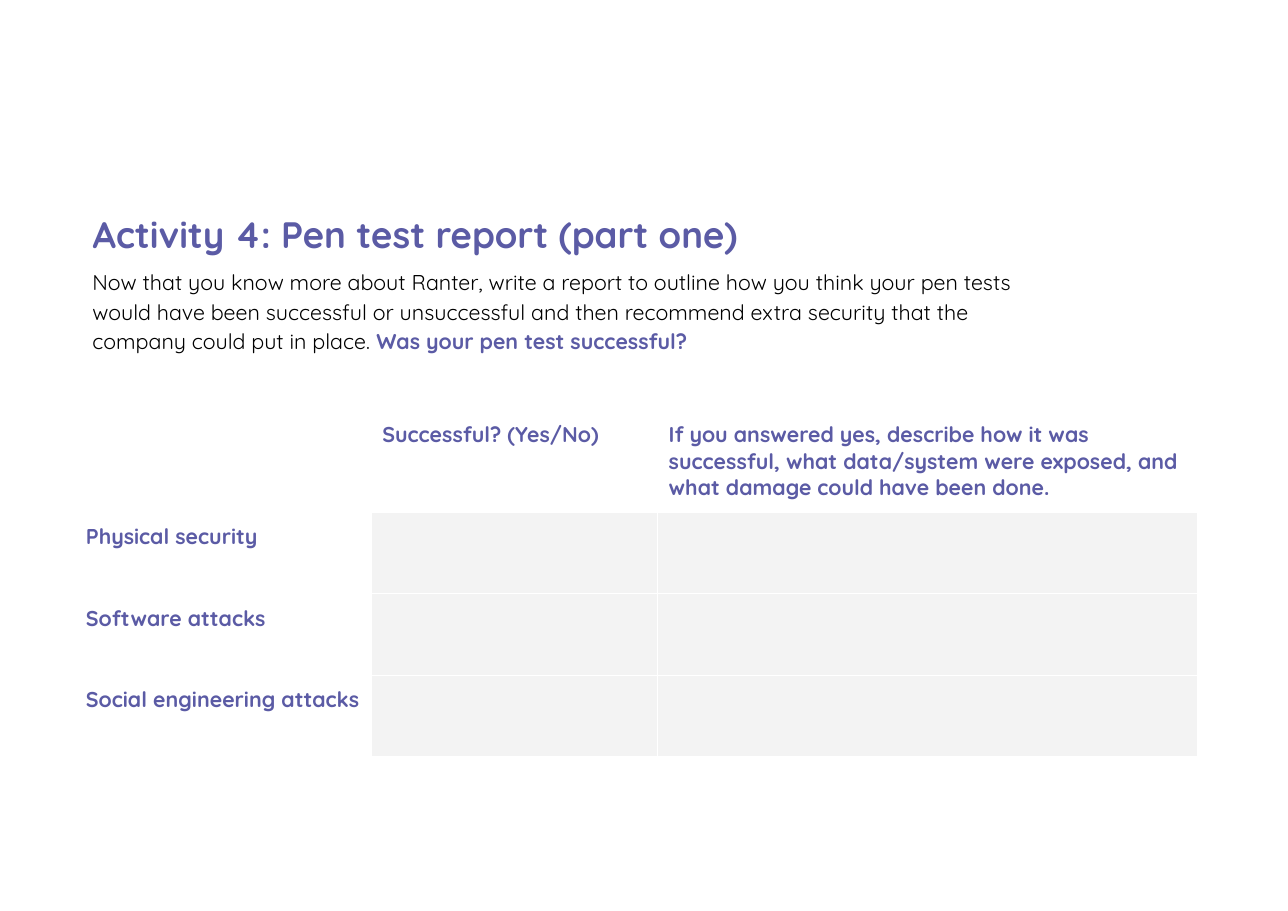
from lxml.etree import SubElement
from pptx import Presentation
from pptx.dml.color import RGBColor
from pptx.enum.text import MSO_ANCHOR as Anchor, MSO_AUTO_SIZE as AutoSize, PP_ALIGN as Align
from pptx.oxml.ns import qn
from pptx.util import Inches, Pt

FONT = "Quicksand"
PURPLE, BLACK, WHITE, GREY = "5B5BA5", "000000", "FFFFFF", "F3F3F3"


def colour(value):
    """Turn a hex string into a colour."""
    return RGBColor.from_string(value)


class Worksheet:
    """Hold the style and the current slide, and add elements to it."""

    def __init__(self, slide):
        """Keep the slide to draw on."""
        self.slide = slide

    def add_runs(self, paragraph, runs, size, spacing=None):
        """Add runs of (text, colour, bold) to a paragraph."""
        paragraph.alignment = Align.LEFT
        paragraph.line_spacing = spacing
        for words, ink, bold in runs:
            run = paragraph.add_run()
            run.text = words
            run.font.name = FONT
            run.font.size = Pt(size)
            run.font.bold = bold
            run.font.color.rgb = colour(ink)

    def fill_frame(self, frame, runs, size):
        """Set up a text frame and add its paragraph."""
        frame.word_wrap = True
        frame.auto_size = AutoSize.NONE
        frame.vertical_anchor = Anchor.TOP
        frame.margin_left = frame.margin_right = Inches(0.1)
        frame.margin_top = frame.margin_bottom = Inches(0.1)
        self.add_runs(frame.paragraphs[0], runs, size, 1.15)

    def title(self, words, left, top, width, height):
        """Place and format the title placeholder."""
        heading = self.slide.shapes.title
        heading.left, heading.top = Inches(left), Inches(top)
        heading.width, heading.height = Inches(width), Inches(height)
        self.fill_frame(heading.text_frame, [(words, PURPLE, True)], 24)

    def text(self, runs, left, top, width, height):
        """Add a block of running text."""
        block = self.slide.shapes.add_textbox(
            Inches(left), Inches(top), Inches(width), Inches(height))
        self.fill_frame(block.text_frame, runs, 14)

    def border(self, cell):
        """Draw thin white borders round a cell."""
        properties = cell._tc.get_or_add_tcPr()
        for position, side in enumerate(("lnL", "lnR", "lnT", "lnB")):
            line = SubElement(properties, qn(f"a:{side}"), w=str(Pt(0.75)))
            solid = SubElement(line, qn("a:solidFill"))
            SubElement(solid, qn("a:srgbClr"), val=WHITE)
            properties.insert(position, line)

    def table(self, rows, left, top, widths, heights):
        """Add a table with grey answer cells where labels meet headings."""
        frame = self.slide.shapes.add_table(
            len(rows), len(widths), Inches(left), Inches(top),
            Inches(sum(widths)), Inches(sum(heights)))
        report = frame.table
        report.first_row = report.horz_banding = False
        for column, width in zip(report.columns, widths):
            column.width = Inches(width)
        for row, height in zip(report.rows, heights):
            row.height = Inches(height)
        for r, row in enumerate(rows):
            for c, words in enumerate(row):
                cell = report.cell(r, c)
                cell.margin_left = cell.margin_right = Inches(0.1)
                cell.margin_top = cell.margin_bottom = Inches(0.1)
                if r and c:
                    cell.fill.solid()
                    cell.fill.fore_color.rgb = colour(GREY)
                else:
                    cell.fill.background()
                self.border(cell)
                if words:
                    self.add_runs(cell.text_frame.paragraphs[0],
                                  [(words, PURPLE, True)], 14)


def main():
    """Build the pen test report slide."""
    deck = Presentation()
    deck.slide_width, deck.slide_height = Inches(11.69), Inches(8.27)
    sheet = Worksheet(deck.slides.add_slide(deck.slide_layouts[5]))
    sheet.title("Activity 4: Pen test report (part one)", 0.74, 1.76, 9.06, 0.6)
    sheet.text([
        ("Now that you know more about Ranter, write a report to outline how "
         "you think your pen tests would have been successful or unsuccessful "
         "and then recommend extra security that the company could put in "
         "place. ", BLACK, False),
        ("Was your pen test successful?", PURPLE, True),
    ], 0.74, 2.31, 9.06, 1.05)
    headings = ["", "Successful? (Yes/No)",
                "If you answered yes, describe how it was successful, what "
                "data/system were exposed, and what damage could have been done."]
    attacks = ["Physical security", "Software attacks", "Social engineering attacks"]
    rows = [headings] + [[attack, "", ""] for attack in attacks]
    sheet.table(rows, 0.68, 3.72, [2.69, 2.6, 4.9], [0.93] + [0.74] * len(attacks))
    deck.save("out.pptx")


if __name__ == "__main__":
    main()
